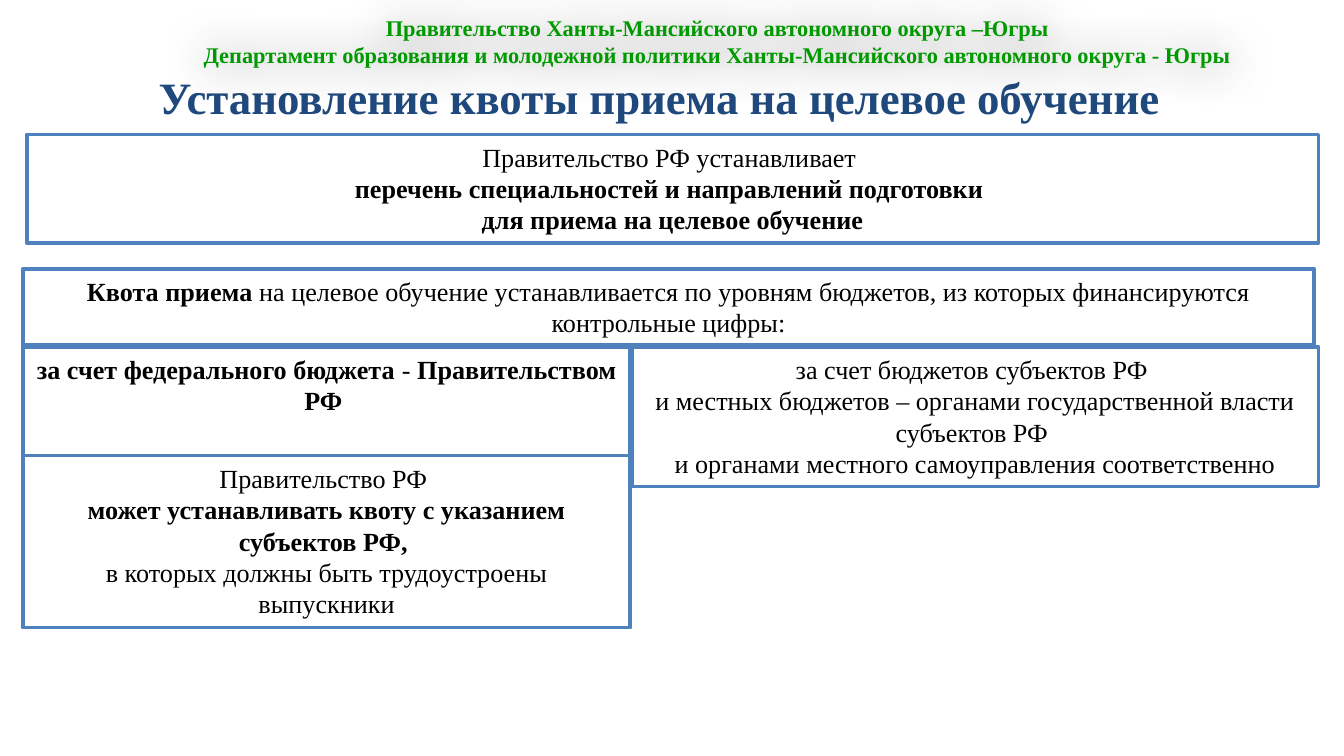
import pptx
import pptx.util
import pptx.dml.color
import pptx.enum.shapes
import pptx.enum.text
import pptx.oxml
import pptx.oxml.ns

Inches = pptx.util.Inches
COLORS = {"green": "009900", "navy": "1F497D", "blue": "4F81BD",
          "white": "FFFFFF", "black": "000000"}
FONT = "Times New Roman"
SHADOW = (
    f'<a:effectLst {pptx.oxml.ns.nsdecls("a")}>'
    '<a:outerShdw blurRad="292100" dist="0" dir="0" algn="ctr" rotWithShape="0">'
    '<a:srgbClr val="333333"><a:alpha val="65000"/></a:srgbClr>'
    '</a:outerShdw></a:effectLst>')


def color(name):
    return pptx.dml.color.RGBColor.from_string(COLORS[name])


def write(frame, lines, size=14, tint="black"):
    """Fill a frame with lines; each line is a list of (text, bold) runs."""
    frame.word_wrap = True
    frame.auto_size = pptx.enum.text.MSO_AUTO_SIZE.NONE
    frame.vertical_anchor = pptx.enum.text.MSO_ANCHOR.TOP
    for i, line in enumerate(lines):
        para = frame.add_paragraph() if i else frame.paragraphs[0]
        para.alignment = pptx.enum.text.PP_ALIGN.CENTER
        for text, bold in line:
            run = para.add_run()
            run.text = text
            run.font.name = FONT
            run.font.size = pptx.util.Pt(size)
            run.font.bold = bold
            run.font.color.rgb = color(tint)


class Page:
    def __init__(self, deck):
        self.slide = deck.slides.add_slide(deck.slide_layouts[5])
        self.shapes = self.slide.shapes

    def title(self, area, text):
        head = self.shapes.title
        head.left, head.top, head.width, head.height = map(Inches, area)
        write(head.text_frame, [[(text, True)]], size=24, tint="navy")

    def label(self, area, lines):
        box = self.shapes.add_textbox(*map(Inches, area))
        box._element.spPr.append(pptx.oxml.parse_xml(SHADOW))
        write(box.text_frame, lines, size=12, tint="green")

    def panel(self, area, lines):
        box = self.shapes.add_shape(
            pptx.enum.shapes.MSO_SHAPE.RECTANGLE, *map(Inches, area))
        box.shadow.inherit = False
        box.fill.solid()
        box.fill.fore_color.rgb = color("white")
        box.line.color.rgb = color("blue")
        box.line.width = pptx.util.Pt(2)
        write(box.text_frame, lines)


def main():
    # Widescreen, 16 by 9
    deck = pptx.Presentation()
    deck.slide_width = Inches(10)
    deck.slide_height = deck.slide_width * 9 // 16
    page = Page(deck)

    # Heading
    page.label((1.11, 0.06, 8.46, 0.5), [
        [("Правительство Ханты-Мансийского автономного округа –Югры", True)],
        [("Департамент образования и молодежной политики "
          "Ханты-Мансийского автономного округа - Югры", True)]])
    page.title((0.3, 0.47, 9.29, 0.47), "Установление квоты приема на целевое обучение ")

    # Left column, lower box
    left, wide, half = 0.17, 9.61, 4.52
    page.panel((left, 3.39, half, 1.28), [
        [("Правительство РФ ", False)],
        [("может устанавливать квоту с указанием субъектов РФ, ", True)],
        [("в которых должны быть трудоустроены выпускники", False)]])

    # Full-width boxes
    page.panel((left, 2, wide, 0.57), [
        [("Квота приема", True),
         (" на целевое обучение устанавливается по уровням бюджетов, "
          "из которых финансируются контрольные цифры:", False)]])
    page.panel((0.2, 1, wide, 0.81), [
        [("Правительство РФ устанавливает ", False)],
        [("перечень специальностей и направлений подготовки ", True)],
        [("для приема на целевое обучение", True)]])

    # Budget levels
    page.panel((left, 2.58, half, 0.81), [
        [("за счет федерального бюджета ", True), ("- ", False),
         ("Правительством РФ ", True)]])
    page.panel((4.7, 2.58, 5.11, 1.04), [
        [("за счет бюджетов субъектов РФ ", False)],
        [("и местных бюджетов – органами государственной власти субъектов РФ ", False)],
        [("и органами местного самоуправления соответственно", False)]])

    deck.save("out.pptx")


if __name__ == "__main__":
    main()
